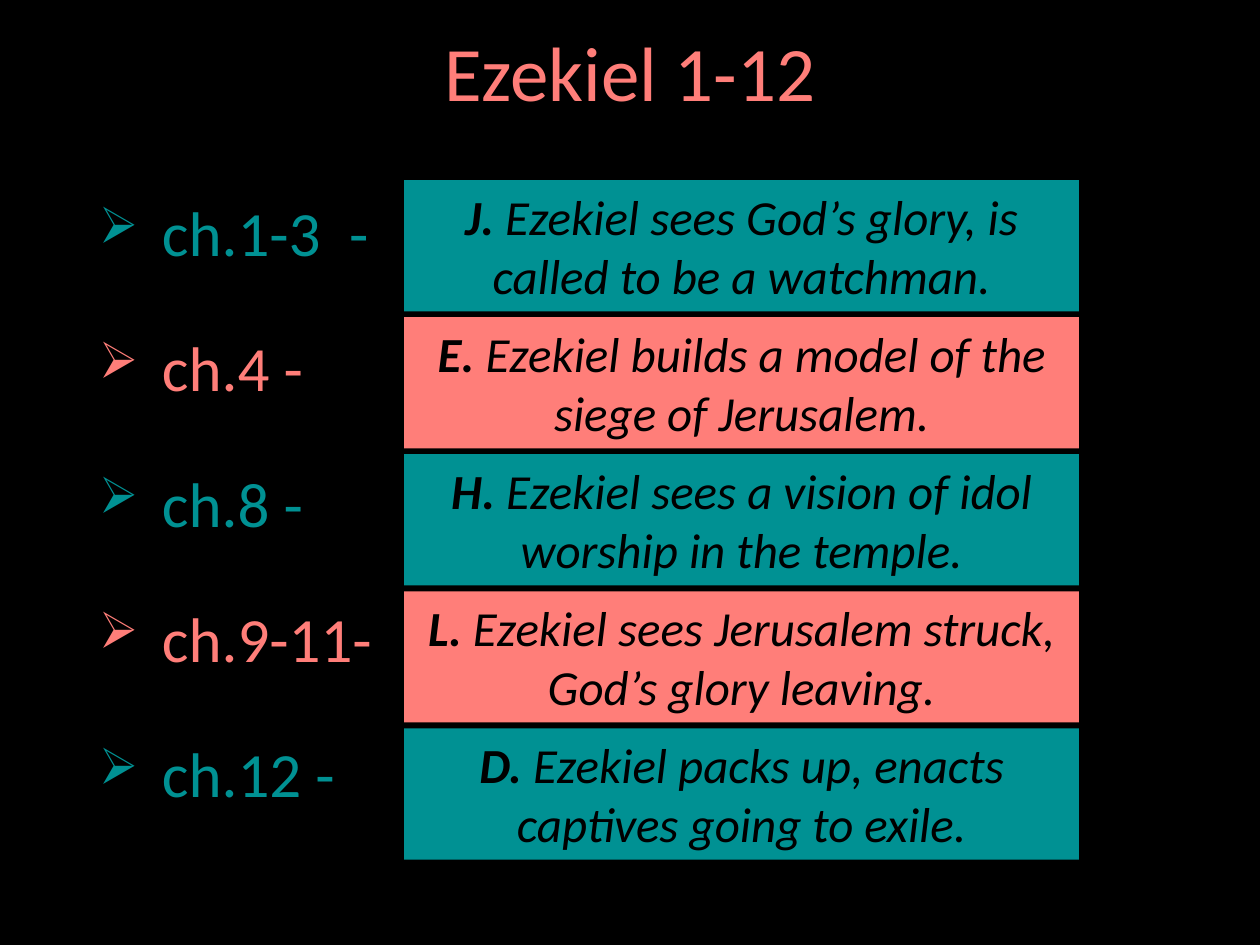
from dataclasses import dataclass

from lxml.etree import SubElement
from pptx import Presentation
from pptx.dml.color import RGBColor
from pptx.enum.shapes import MSO_SHAPE
from pptx.enum.text import MSO_ANCHOR, MSO_AUTO_SIZE, PP_ALIGN
from pptx.oxml.ns import qn
from pptx.util import Pt

FONT = "Calibri"
BLACK, TEAL, CORAL = "000000", "009193", "FF7E79"
BOX_LEFT, BOX_TOP, BOX_WIDTH, BOX_HEIGHT = 231, 103, 385.5, 75
BOX_PITCH = 78.3
TEXT_LEFT, TEXT_WIDTH = 49.5, 621
INDENT = 36


@dataclass
class Passage:
    chapters: str
    letter: str
    summary: str


PASSAGES = [
    Passage("ch.1-3  -", "J. ", "Ezekiel sees God’s glory, is called to be a watchman."),
    Passage("ch.4 -", "E. ", "Ezekiel builds a model of the siege of Jerusalem."),
    Passage("ch.8 -", "H. ", "Ezekiel sees a vision of idol worship in the temple."),
    Passage("ch.9-11-", "L. ", "Ezekiel sees Jerusalem struck, God’s glory leaving."),
    Passage("ch.12 -", "D. ", "Ezekiel packs up, enacts captives going to exile."),
]


def rgb(color: str) -> RGBColor:
    return RGBColor.from_string(color)


def row_color(row: int) -> str:
    return (TEAL, CORAL)[row % 2]


def style_run(r, size: float, color: str, bold=None, italic=None) -> None:
    font = r.font
    font.name, font.size = FONT, Pt(size)
    font.bold, font.italic = bold, italic
    font.color.rgb = rgb(color)


def add_text_frame(s, top: float, height: float):
    box = s.shapes.add_textbox(Pt(TEXT_LEFT), Pt(top), Pt(TEXT_WIDTH), Pt(height))
    tf = box.text_frame
    tf.word_wrap = True
    return tf


def add_bullet(p) -> None:
    pPr = p._p.get_or_add_pPr()
    pPr.set("marL", str(Pt(INDENT)))
    pPr.set("indent", str(-Pt(INDENT)))
    SubElement(pPr, qn("a:buSzPct"), val="80000")
    SubElement(pPr, qn("a:buChar"), char="➢")


def draw_title(s, title: str) -> None:
    tf = add_text_frame(s, 11.5, 65)
    tf.vertical_anchor = MSO_ANCHOR.MIDDLE
    tf.text = title
    p = tf.paragraphs[0]
    p.alignment, p.line_spacing = PP_ALIGN.CENTER, 0.9
    style_run(p.runs[0], 44, CORAL)


def draw_chapters(s, passages: list[Passage]) -> None:
    tf = add_text_frame(s, 107.3, 379.5)
    tf.text = "\n".join(passage.chapters for passage in passages)
    for row, p in enumerate(tf.paragraphs):
        p.space_before, p.space_after = Pt(4), Pt(30)
        add_bullet(p)
        style_run(p.runs[0], 36, row_color(row))


def draw_summary(s, row: int, passage: Passage) -> None:
    sp = s.shapes.add_shape(
        MSO_SHAPE.RECTANGLE,
        Pt(BOX_LEFT), Pt(BOX_TOP + row * BOX_PITCH), Pt(BOX_WIDTH), Pt(BOX_HEIGHT),
    )
    sp.shadow.inherit = False
    sp.fill.solid()
    sp.fill.fore_color.rgb = rgb(row_color(row))
    sp.line.fill.background()
    tf = sp.text_frame
    tf.word_wrap = True
    tf.auto_size = MSO_AUTO_SIZE.SHAPE_TO_FIT_TEXT
    tf.vertical_anchor = MSO_ANCHOR.TOP
    p = tf.paragraphs[0]
    p.alignment = PP_ALIGN.CENTER
    for text, bold in ((passage.letter, True), (passage.summary, False)):
        r = p.add_run()
        r.text = text
        style_run(r, 28, BLACK, bold, True)


def main() -> None:
    prs = Presentation()
    prs.slide_width, prs.slide_height = Pt(720), Pt(540)
    s = prs.slides.add_slide(prs.slide_layouts[6])
    s.background.fill.solid()
    s.background.fill.fore_color.rgb = rgb(BLACK)

    # Title and chapter list
    draw_title(s, "Ezekiel 1-12")
    draw_chapters(s, PASSAGES)

    # Summary boxes beside the chapters
    for row, passage in enumerate(PASSAGES):
        draw_summary(s, row, passage)

    prs.save("out.pptx")


if __name__ == "__main__":
    main()
